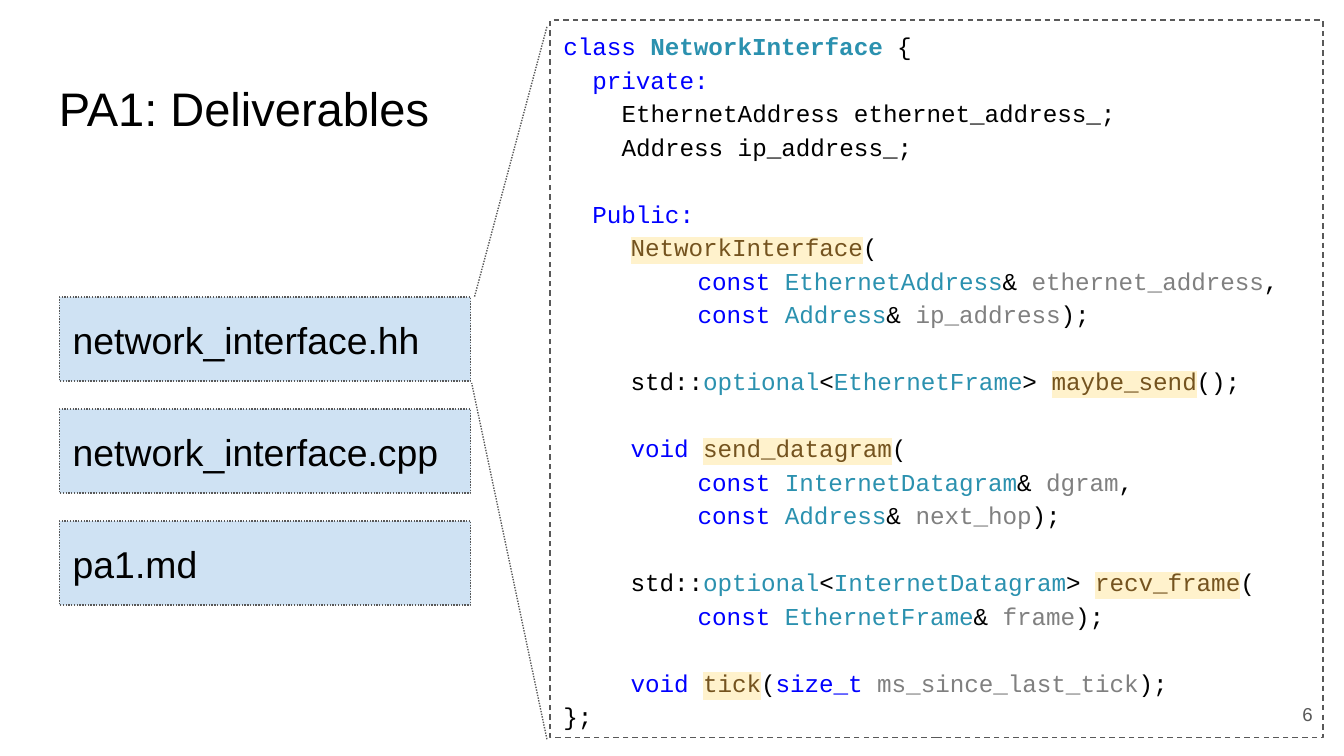
import pptx
import pptx.dml.color
import pptx.enum.dml
import pptx.enum.shapes
import pptx.enum.text
import pptx.oxml.ns
import pptx.util
from lxml import etree

Pt = pptx.util.Pt
RGBColor = pptx.dml.color.RGBColor
Dash = pptx.enum.dml.MSO_LINE
Anchor = pptx.enum.text.MSO_ANCHOR
Align = pptx.enum.text.PP_ALIGN
qn = pptx.oxml.ns.qn

BLACK = RGBColor(0x00, 0x00, 0x00)
WHITE = RGBColor(0xFF, 0xFF, 0xFF)
GREY = RGBColor(0x59, 0x59, 0x59)
PALE_BLUE = RGBColor(0xCF, 0xE2, 0xF3)
KEYWORD_BLUE = RGBColor(0x00, 0x00, 0xFF)
TYPE_TEAL = RGBColor(0x2B, 0x91, 0xAF)
METHOD_BROWN = RGBColor(0x74, 0x53, 0x1F)
METHOD_CREAM = RGBColor(0xFF, 0xF2, 0xCC)
ARGUMENT_GREY = RGBColor(0x80, 0x80, 0x80)

# Content
TITLE = "PA1: Deliverables"
FILES = ["network_interface.hh", "network_interface.cpp", "pa1.md"]
PAGE_NUMBER = "6"

TOKEN_COLORS = {
    "plain": BLACK, "keyword": KEYWORD_BLUE, "type": TYPE_TEAL,
    "class": TYPE_TEAL, "method": METHOD_BROWN, "argument": ARGUMENT_GREY,
}


def argument_line(type_name, name, ending):
    return [("keyword", "const"), ("plain", " "), ("type", type_name),
            ("plain", "& "), ("argument", name), ("plain", ending)]


def optional_line(type_name, method, ending):
    return [("plain", "std::"), ("type", "optional"), ("plain", "<"),
            ("type", type_name), ("plain", "> "), ("method", method),
            ("plain", ending)]


# Indents in points: two and four characters, then one and two tab stops
LABEL, FIELD, MEMBER, ARGUMENT = 15.6, 31.2, 36, 72

# Each block is a list of (indent, tokens); a gap separates the blocks
CODE_BLOCKS = [
    [(0, [("keyword", "class"), ("plain", " "),
          ("class", "NetworkInterface"), ("plain", " {")]),
     (LABEL, [("keyword", "private:")]),
     (FIELD, [("plain", "EthernetAddress ethernet_address_;")]),
     (FIELD, [("plain", "Address ip_address_;")])],
    [(LABEL, [("keyword", "Public:")]),
     (MEMBER, [("method", "NetworkInterface"), ("plain", "(")]),
     (ARGUMENT, argument_line("EthernetAddress", "ethernet_address", ",")),
     (ARGUMENT, argument_line("Address", "ip_address", ");"))],
    [(MEMBER, optional_line("EthernetFrame", "maybe_send", "();"))],
    [(MEMBER, [("keyword", "void"), ("plain", " "),
               ("method", "send_datagram"), ("plain", "(")]),
     (ARGUMENT, argument_line("InternetDatagram", "dgram", ",")),
     (ARGUMENT, argument_line("Address", "next_hop", ");"))],
    [(MEMBER, optional_line("InternetDatagram", "recv_frame", "(")),
     (ARGUMENT, argument_line("EthernetFrame", "frame", ");"))],
    [(MEMBER, [("keyword", "void"), ("plain", " "), ("method", "tick"),
               ("plain", "("), ("keyword", "size_t"), ("plain", " "),
               ("argument", "ms_since_last_tick"), ("plain", ");")]),
     (0, [("plain", "};")])],
]

# Layout in points
FILE_LEFT, FILE_TOP, FILE_WIDTH, FILE_HEIGHT, FILE_STEP = 31.9, 159.2, 220.3, 45, 60
CODE_BOX = (294.7, 10.8, 414, 384.5)
CODE_GAP = 17.95
CALLOUT_LINES = [((293, 14.4), (254.2, 159.1)), ((293, 396), (252.7, 205.2))]


def set_all(target, values):
    for name, value in values.items():
        setattr(target, name, value)


def style_line(line, dash):
    line.color.rgb = GREY
    set_all(line, {"width": Pt(0.75), "dash_style": dash})


def prepare_frame(box, anchor):
    frame = box.text_frame
    set_all(frame, {"word_wrap": True, "vertical_anchor": anchor})
    for side in ("left", "top", "right", "bottom"):
        setattr(frame, "margin_" + side, Pt(7.2))
    return frame


def add_span(para, text, color, size, font="Arial", bold=False):
    span = para.add_run()
    span.text = text
    set_all(span.font, {"name": font, "size": Pt(size), "bold": bold})
    span.font.color.rgb = color
    return span


def highlight(span, color):
    mark = etree.Element(qn("a:highlight"))
    etree.SubElement(mark, qn("a:srgbClr")).set("val", str(color))
    span.font._element.find(qn("a:solidFill")).addnext(mark)


def add_rectangle(page, place, fill, dash):
    box = page.shapes.add_shape(
        pptx.enum.shapes.MSO_SHAPE.RECTANGLE, *map(Pt, place))
    box.shadow.inherit = False
    box.fill.solid()
    box.fill.fore_color.rgb = fill
    style_line(box.line, dash)
    return box


def add_label(page, place, text, color, size, anchor, align):
    box = page.shapes.add_textbox(*map(Pt, place))
    para = prepare_frame(box, anchor).paragraphs[0]
    para.alignment = align
    add_span(para, text, color, size)


def add_code(page):
    box = add_rectangle(page, CODE_BOX, WHITE, Dash.DASH)
    frame = prepare_frame(box, Anchor.MIDDLE)
    para = None
    for block_index, block in enumerate(CODE_BLOCKS):
        for line_index, (indent, tokens) in enumerate(block):
            para = frame.add_paragraph() if para else frame.paragraphs[0]
            starts_block = block_index > 0 and line_index == 0
            set_all(para, {"alignment": Align.LEFT, "line_spacing": 1.15,
                           "space_before": Pt(CODE_GAP if starts_block else 0)})
            para._p.get_or_add_pPr().set("marL", str(Pt(indent)))
            for kind, text in tokens:
                span = add_span(para, text, TOKEN_COLORS[kind], 13,
                                "Courier New", kind == "class")
                if kind == "method":
                    highlight(span, METHOD_CREAM)


def main():
    deck = pptx.Presentation()
    set_all(deck, {"slide_width": Pt(720), "slide_height": Pt(405)})
    page = deck.slides.add_slide(deck.slide_layouts[6])

    # Title
    add_label(page, (24.5, 35.3, 671, 45.4), TITLE, BLACK, 25.2,
              Anchor.TOP, Align.LEFT)

    # Deliverable files
    for index, name in enumerate(FILES):
        place = (FILE_LEFT, FILE_TOP + index * FILE_STEP, FILE_WIDTH, FILE_HEIGHT)
        box = add_rectangle(page, place, PALE_BLUE, Dash.ROUND_DOT)
        para = prepare_frame(box, Anchor.MIDDLE).paragraphs[0]
        para.alignment = Align.LEFT
        add_span(para, name, BLACK, 20)

    # Header file listing and the lines that open it out
    add_code(page)
    for start, end in CALLOUT_LINES:
        callout = page.shapes.add_connector(
            pptx.enum.shapes.MSO_CONNECTOR.STRAIGHT, *map(Pt, start + end))
        style_line(callout.line, Dash.ROUND_DOT)
        etree.SubElement(callout._element.spPr, qn("a:effectLst"))

    # Page number
    add_label(page, (667.1, 367.2, 43.2, 31), PAGE_NUMBER, GREY, 10,
              Anchor.MIDDLE, Align.RIGHT)

    deck.save("out.pptx")


if __name__ == "__main__":
    main()
